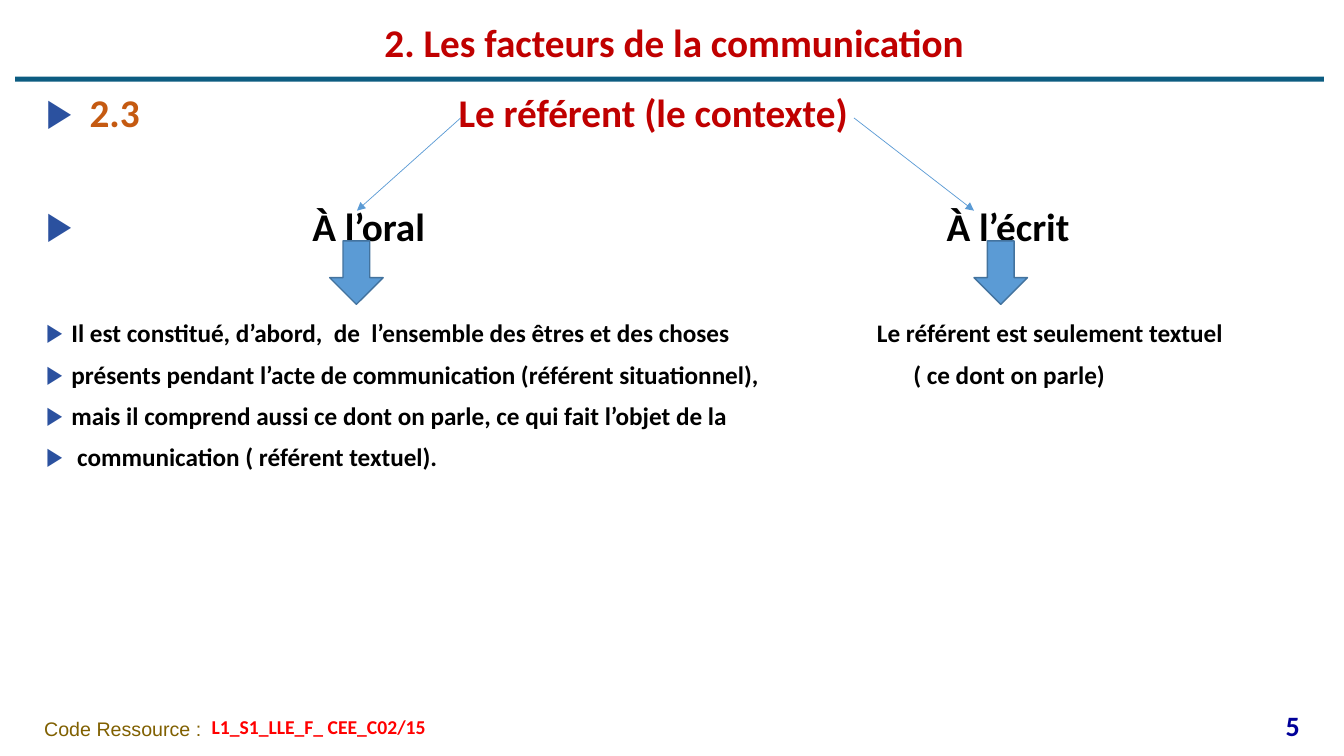
"""Build the slide on the referent, with lengths in hundredths of the slide's size."""
from dataclasses import dataclass

from lxml.etree import SubElement
from pptx import Presentation
from pptx.dml.color import RGBColor
from pptx.enum.shapes import MSO_CONNECTOR, MSO_SHAPE
from pptx.enum.text import MSO_ANCHOR, PP_ALIGN
from pptx.oxml.ns import qn
from pptx.util import Inches, Pt

WIDTH, HEIGHT = Inches(13.33), Inches(7.5)
RED, BLACK, BLUE = "C00000", "000000", "5B9BD5"


@dataclass
class Box:
    x: float
    y: float
    w: float
    h: float


@dataclass
class Line:
    runs: list[tuple[str, str]]
    size: int = 18
    before: int = 10
    tabs: tuple[float, ...] = ()


@dataclass
class Branch:
    x1: float
    x2: float
    arrow_x: float


LINES = [
    Line([("\t2.3", "C55A11"), ("\tLe référent (le contexte)", RED)], 28, 10, (3.23, 30.68)),
    Line([("\tÀ l’oral\tÀ l’écrit", BLACK)], 28, 51, (19.8, 66.99)),
    Line([("Il est constitué, d’abord,  de  l’ensemble des êtres et des choses"
           "\tLe référent est seulement textuel", BLACK)], before=51, tabs=(61.81,)),
    Line([("présents pendant l’acte de communication (référent situationnel),"
           "\t( ce dont on parle)", BLACK)], tabs=(64.52,)),
    Line([("mais il comprend aussi ce dont on parle, ce qui fait l’objet de la", BLACK)]),
    Line([(" communication ( référent textuel).", BLACK)]),
]
BRANCHES = [Branch(34.28, 26.56, 24.53), Branch(63.54, 72.47, 72.47)]


def across(share: float) -> int:
    return round(WIDTH * share / 100)


def down(share: float) -> int:
    return round(HEIGHT * share / 100)


def frame(box: Box) -> tuple[int, int, int, int]:
    return across(box.x), down(box.y), across(box.w), down(box.h)


def rgb(value: str) -> RGBColor:
    return RGBColor.from_string(value)


def add_run(p, text: str, *, size: int, color: str, bold: bool = True, font: str = "Calibri"):
    r = p.add_run()
    r.text = text
    r.font.name, r.font.size, r.font.bold = font, Pt(size), bold
    r.font.color.rgb = rgb(color)


def add_text_box(s, box: Box, anchor=MSO_ANCHOR.MIDDLE):
    tf = s.shapes.add_textbox(*frame(box)).text_frame
    tf.word_wrap = True
    tf.vertical_anchor = anchor
    return tf


def add_label(s, box: Box, text: str, align=PP_ALIGN.LEFT, **style):
    p = add_text_box(s, box).paragraphs[0]
    p.alignment = align
    add_run(p, text, **style)


def add_line(p, line: Line):
    p.line_spacing, p.space_before = 0.9, Pt(line.before)
    pPr = p._p.get_or_add_pPr()
    pPr.set("marL", str(Inches(0.25)))
    pPr.set("indent", str(-Inches(0.25)))
    SubElement(SubElement(pPr, qn("a:buClr")), qn("a:srgbClr"), val="2B519F")
    SubElement(pPr, qn("a:buFont"), typeface="Arial")
    SubElement(pPr, qn("a:buChar"), char="▶")
    if line.tabs:
        stops = SubElement(pPr, qn("a:tabLst"))
        for stop in line.tabs:
            SubElement(stops, qn("a:tab"), pos=str(across(stop)), algn="l")
    for text, color in line.runs:
        add_run(p, text, size=line.size, color=color)


def add_shape(s, kind, box: Box, fill: str, outline: str = ""):
    sp = s.shapes.add_shape(kind, *frame(box))
    sp.shadow.inherit = False
    sp.fill.solid()
    sp.fill.fore_color.rgb = rgb(fill)
    if outline:
        sp.line.color.rgb, sp.line.width = rgb(outline), Pt(1)
    else:
        sp.line.fill.background()


def add_branch(s, branch: Branch):
    c = s.shapes.add_connector(MSO_CONNECTOR.STRAIGHT, across(branch.x1), down(15.6),
                               across(branch.x2), down(27.87))
    c.line.color.rgb, c.line.width = rgb(BLUE), Pt(0.5)
    SubElement(c.line._get_or_add_ln(), qn("a:tailEnd"), type="triangle")
    SubElement(c._element.spPr, qn("a:effectLst"))
    add_shape(s, MSO_SHAPE.DOWN_ARROW, Box(branch.arrow_x, 31.87, 3.98, 8.4), BLUE, "43739E")


def add_title(s, box: Box, text: str):
    sp = s.shapes.title
    sp.left, sp.top, sp.width, sp.height = frame(box)
    tf = sp.text_frame
    tf.word_wrap, tf.vertical_anchor = True, MSO_ANCHOR.MIDDLE
    p = tf.paragraphs[0]
    p.alignment, p.line_spacing = PP_ALIGN.CENTER, 0.9
    add_run(p, text, size=28, color=RED)


def main():
    prs = Presentation()
    prs.slide_width, prs.slide_height = WIDTH, HEIGHT
    s = prs.slides.add_slide(prs.slide_layouts[5])
    add_shape(s, MSO_SHAPE.RECTANGLE, Box(1.13, 10.13, 97.37, 0.67), "0C5C81")
    add_title(s, Box(2.93, 2.67, 94.45, 6.53), "2. Les facteurs de la communication")
    tf = add_text_box(s, Box(2.7, 11.73, 94.52, 78), MSO_ANCHOR.TOP)
    for i, line in enumerate(LINES):
        add_line(tf.add_paragraph() if i else tf.paragraphs[0], line)
    add_label(s, Box(2.55, 93.73, 13.28, 5.2), "Code Ressource :",
              size=14, color="806000", bold=False, font="Arial")
    add_label(s, Box(15, 93.47, 44.34, 5.2), "L1_S1_LLE_F_ CEE_C02/15", size=14, color="FF0000")
    add_label(s, Box(91.52, 93.33, 5.93, 5.2), "5", PP_ALIGN.RIGHT, size=20, color="000099")
    for branch in BRANCHES:
        add_branch(s, branch)
    prs.save("out.pptx")


if __name__ == "__main__":
    main()
